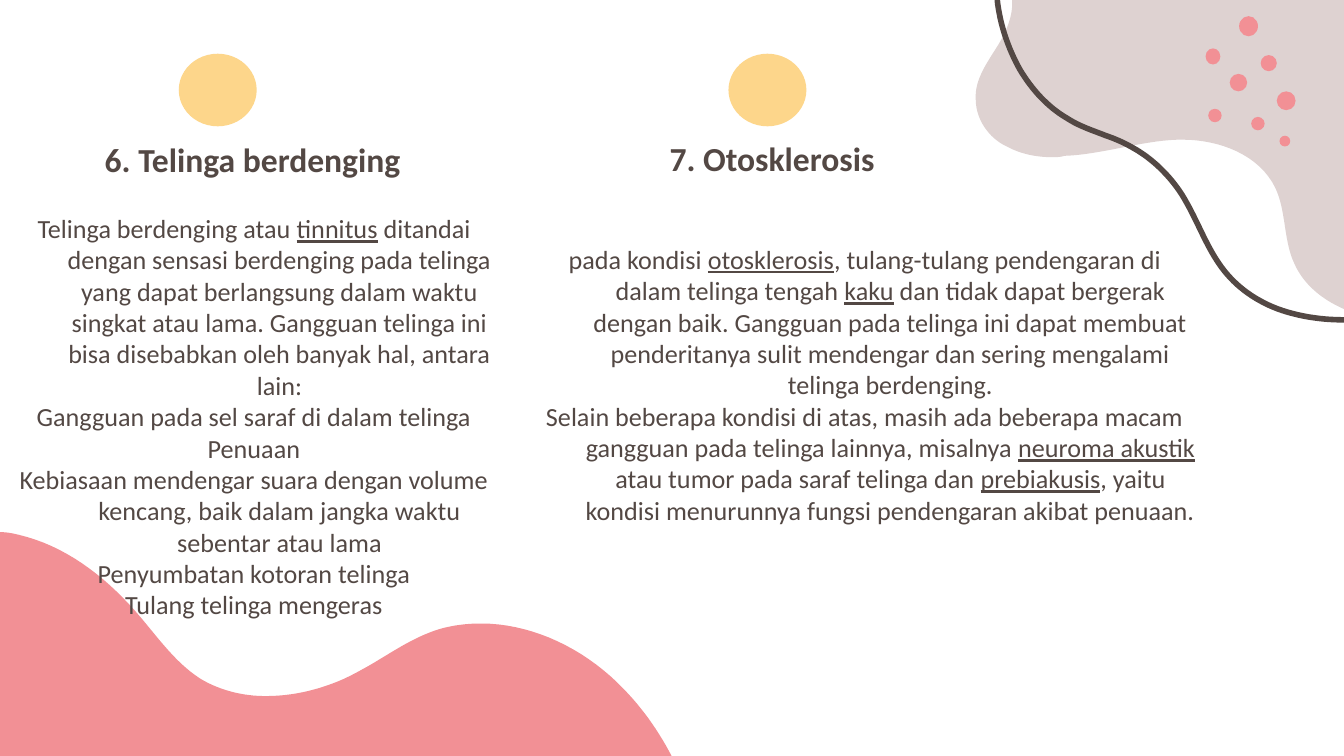
from dataclasses import dataclass

from pptx import Presentation
from pptx.dml.color import RGBColor
from pptx.enum.shapes import MSO_SHAPE
from pptx.enum.text import MSO_ANCHOR, PP_ALIGN
from pptx.util import Pt

PX = 9144
STEPS = 16
PINK, MAUVE, DARK, GOLD = "F29095", "DED2D1", "534844", "FDD68B"


@dataclass
class Box:
    x: int
    y: int
    w: int
    h: int


@dataclass
class Run:
    text: str
    under: bool = False


@dataclass
class Column:
    oval: Box
    head: Box
    title: str
    body: Box
    top: int
    paras: list[list[Run]]


WAVE = [
    (0, 396),
    (5, 396, 10, 397, 14, 398), (48, 406, 77, 428, 100, 454),
    (116, 472, 129, 492, 149, 505), (164, 514, 181, 518, 198, 518),
    (222, 518, 247, 511, 268, 499), (285, 490, 301, 478, 319, 471),
    (331, 466, 345, 464, 358, 464), (392, 464, 427, 479, 454, 503),
    (473, 520, 488, 540, 500, 563), (0, 563),
]
BLOB = [
    (753, 0),
    (754, 11, 749, 23, 743, 33), (735, 46, 725, 59, 726, 74),
    (726, 89, 736, 103, 749, 109), (760, 115, 772, 117, 783, 117),
    (786, 117, 789, 117, 792, 116), (820, 115, 848, 105, 876, 104),
    (877, 104, 879, 104, 880, 104), (907, 104, 937, 115, 949, 140),
    (957, 157, 955, 179, 963, 196), (970, 212, 984, 223, 1000, 230), (1000, 0),
]
STRAND = [
    (742, 0),
    (744, 18, 750, 36, 759, 52), (768, 67, 780, 80, 794, 88),
    (803, 94, 813, 97, 823, 101), (832, 104, 840, 108, 848, 113),
    (862, 122, 875, 136, 883, 151), (892, 167, 898, 184, 909, 199),
    (920, 214, 936, 225, 954, 231), (969, 236, 985, 238, 1000, 238),
]
DOTS = [
    Box(922, 12, 14, 15), Box(897, 36, 11, 12), Box(938, 41, 12, 12),
    Box(915, 55, 13, 13), Box(899, 81, 10, 10), Box(931, 87, 10, 10),
    Box(950, 68, 14, 14), Box(952, 101, 8, 8),
]
COLUMNS = [
    Column(
        Box(133, 40, 58, 54), Box(17, 131, 342, 42), "6. Telinga berdenging",
        Box(-17, 148, 400, 312), 10,
        [
            [
                Run("Telinga berdenging atau "), Run("tinnitus", True),
                Run(" ditandai dengan sensasi berdenging pada telinga yang dapat "
                    "berlangsung dalam waktu singkat atau lama. Gangguan telinga ini "
                    "bisa disebabkan oleh banyak hal, antara lain:"),
            ],
            [Run("Gangguan pada sel saraf di dalam telinga")],
            [Run("Penuaan")],
            [Run("Kebiasaan mendengar suara dengan volume kencang, baik dalam "
                 "jangka waktu sebentar atau lama")],
            [Run("Penyumbatan kotoran telinga")],
            [Run("Tulang telinga mengeras")],
        ],
    ),
    Column(
        Box(542, 40, 58, 54), Box(333, 106, 483, 67), "7. Otosklerosis",
        Box(375, 148, 525, 333), 33,
        [
            [
                Run("pada kondisi "), Run("otosklerosis", True),
                Run(", tulang-tulang pendengaran di dalam telinga tengah "),
                Run("kaku", True),
                Run(" dan tidak dapat bergerak dengan baik. Gangguan pada telinga "
                    "ini dapat membuat penderitanya sulit mendengar dan sering "
                    "mengalami telinga berdenging."),
            ],
            [
                Run("Selain beberapa kondisi di atas, masih ada beberapa macam "
                    "gangguan pada telinga lainnya, misalnya "),
                Run("neuroma akustik", True),
                Run(" atau tumor pada saraf telinga dan "), Run("prebiakusis", True),
                Run(", yaitu kondisi menurunnya fungsi pendengaran akibat penuaan."),
            ],
        ],
    ),
]


def color(code: str) -> RGBColor:
    return RGBColor.from_string(code)


def place(box: Box) -> list[int]:
    return [v * PX for v in (box.x, box.y, box.w, box.h)]


def paint(shape, fill: str) -> None:
    shape.shadow.inherit = False
    shape.fill.solid()
    shape.fill.fore_color.rgb = color(fill)
    shape.line.fill.background()


def trace(path: list[tuple]) -> list[tuple]:
    points = [path[0]]
    for part in path[1:]:
        if len(part) == 2:
            points.append(part)
            continue
        a, b, c, d = points[-1], part[:2], part[2:4], part[4:]
        for step in range(1, STEPS + 1):
            t = step / STEPS
            u = 1 - t
            points.append(tuple(
                u**3 * a[i] + 3 * u * u * t * b[i] + 3 * u * t * t * c[i] + t**3 * d[i]
                for i in (0, 1)
            ))
    return points


def outline(slide, path: list[tuple], close: bool = True):
    points = [(round(x * PX), round(y * PX)) for x, y in trace(path)]
    form = slide.shapes.build_freeform(*points[0])
    form.add_line_segments(points[1:], close=close)
    return form.convert_to_shape()


def oval(slide, box: Box, fill: str) -> None:
    paint(slide.shapes.add_shape(MSO_SHAPE.OVAL, *place(box)), fill)


def frame(slide, box: Box, top: int, anchor: MSO_ANCHOR):
    text = slide.shapes.add_textbox(*place(box)).text_frame
    text.word_wrap = True
    text.vertical_anchor = anchor
    text.margin_left = text.margin_right = text.margin_bottom = 10 * PX
    text.margin_top = top * PX
    return text


def write(para, item: Run, size: int, bold: bool = False) -> None:
    run = para.add_run()
    run.text = item.text
    font = run.font
    font.name, font.size, font.bold = "Calibri", Pt(size), bold
    font.underline = item.under
    font.color.rgb = color(DARK)


def column(slide, col: Column) -> None:
    para = frame(slide, col.head, 10, MSO_ANCHOR.BOTTOM).paragraphs[0]
    para.alignment = PP_ALIGN.CENTER
    write(para, Run(col.title), 18, True)
    para.add_line_break()
    text = frame(slide, col.body, col.top, MSO_ANCHOR.TOP)
    for i, runs in enumerate(col.paras):
        para = text.add_paragraph() if i else text.paragraphs[0]
        para.alignment = PP_ALIGN.CENTER
        props = para._p.get_or_add_pPr()
        props.set("marL", str(50 * PX))
        props.set("indent", str(-38 * PX))
        for item in runs:
            write(para, item, 14)
    oval(slide, col.oval, GOLD)


def main() -> None:
    deck = Presentation()
    deck.slide_width = 1000 * PX
    deck.slide_height = deck.slide_width * 9 // 16
    slide = deck.slides.add_slide(deck.slide_layouts[6])
    paint(outline(slide, WAVE), PINK)
    paint(outline(slide, BLOB), MAUVE)
    strand = outline(slide, STRAND, False)
    strand.shadow.inherit = False
    strand.fill.background()
    strand.line.color.rgb = color(DARK)
    strand.line.width = Pt(3)
    for dot in DOTS:
        oval(slide, dot, PINK)
    for col in COLUMNS:
        column(slide, col)
    deck.save("out.pptx")


if __name__ == "__main__":
    main()
